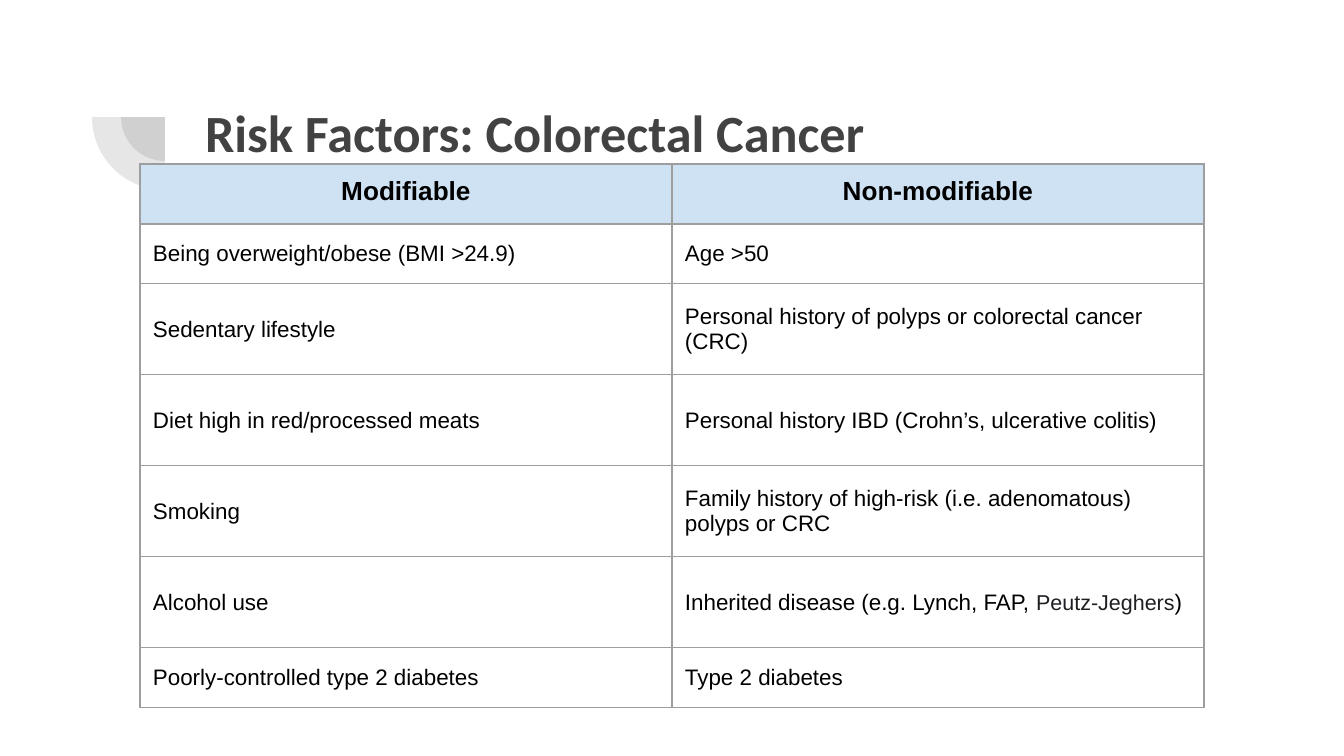
from pptx import Presentation
from pptx.dml.color import RGBColor as RGB
from pptx.enum.shapes import MSO_SHAPE as Shape
from pptx.enum.text import MSO_ANCHOR as Anchor, MSO_AUTO_SIZE as AutoSize, PP_ALIGN as Align
from pptx.oxml import parse_xml
from pptx.oxml.ns import nsdecls
from pptx.util import Pt

TITLE = "Risk Factors: Colorectal Cancer"
HEADERS = ("Modifiable", "Non-modifiable")
FACTORS = [
    ("Being overweight/obese (BMI >24.9)", "Age >50"),
    ("Sedentary lifestyle", "Personal history of polyps or colorectal cancer (CRC)"),
    ("Diet high in red/processed meats", "Personal history IBD (Crohn’s, ulcerative colitis)"),
    ("Smoking", "Family history of high-risk (i.e. adenomatous) polyps or CRC"),
    ("Alcohol use", ("Inherited disease (e.g. Lynch, FAP, ", "Peutz-Jeghers", ")")),
    ("Poorly-controlled type 2 diabetes", "Type 2 diabetes"),
]

THEME = {
    "title": {"name": "Calibri", "size": 28, "bold": True, "color": "424242"},
    "header": {"name": "Arial", "size": 14, "bold": True, "color": "000000"},
    "body": {"name": "Arial", "size": 12, "bold": False, "color": "000000"},
    "term": {"name": "Arial", "size": 11.5, "bold": False, "color": "1E1E23"},
    "pie": "424242", "header_fill": "CFE2F3", "border": "9E9E9E",
}
SLIDE = (1344, 756)
TITLE_BOX = (192, 87, 1034, 146)
PIE_CENTER, PIE_RADII, PIE_ALPHA = (165, 117), (44, 73), 13
TABLE_AT, COL_W = (140, 164), 532
ROW_H = (60, 60, 91, 91, 91, 91, 60)
INSET = 13
BORDER_PT = 0.75


def px(n):
    return round(n * 9144000 / 1344)


def boxed(*values):
    return [px(v) for v in values]


def set_attrs(target, values):
    for key, value in values.items():
        setattr(target, key, value)


def insets(*names):
    return {f"margin_{name}": px(INSET) for name in names}


def add_run(p, text, style):
    r = p.add_run()
    r.text = text
    look = THEME[style]
    set_attrs(r.font, {"name": look["name"], "size": Pt(look["size"]), "bold": look["bold"]})
    r.font.color.rgb = RGB.from_string(look["color"])


def add_pie(s, radius):
    cx, cy = PIE_CENTER
    sp = s.shapes.add_shape(Shape.PIE, *boxed(cx - radius, cy - radius, 2 * radius, 2 * radius))
    sp.adjustments[0], sp.adjustments[1] = 108, 162
    sp.rotation = 270
    sp.shadow.inherit = False
    sp.line.fill.background()
    sp.fill.solid()
    sp.fill.fore_color.rgb = RGB.from_string(THEME["pie"])
    color = sp.fill._xPr.solidFill[0]
    color.append(parse_xml(f'<a:alpha {nsdecls("a")} val="{PIE_ALPHA * 1000}"/>'))


def add_borders(cell):
    tcPr = cell._tc.get_or_add_tcPr()
    for i, side in enumerate("LRTB"):
        tcPr.insert(i, parse_xml(
            f'<a:ln{side} {nsdecls("a")} w="{Pt(BORDER_PT)}"><a:solidFill>'
            f'<a:srgbClr val="{THEME["border"]}"/></a:solidFill></a:ln{side}>'))


def fill_cell(cell, content, is_header):
    set_attrs(cell, insets("left", "right", "top", "bottom"))
    cell.vertical_anchor = Anchor.TOP if is_header else Anchor.MIDDLE
    p = cell.text_frame.paragraphs[0]
    p.alignment = Align.CENTER if is_header else Align.LEFT
    parts = (content,) if isinstance(content, str) else content
    for i, text in enumerate(parts):
        add_run(p, text, "header" if is_header else "term" if i == 1 else "body")
    if is_header:
        cell.fill.solid()
        cell.fill.fore_color.rgb = RGB.from_string(THEME["header_fill"])
    else:
        cell.fill.background()
    add_borders(cell)


def add_title(s):
    sp = s.shapes.title
    set_attrs(sp, dict(zip(("left", "top", "width", "height"), boxed(*TITLE_BOX))))
    tf = sp.text_frame
    set_attrs(tf, {"word_wrap": True, "auto_size": AutoSize.NONE, "vertical_anchor": Anchor.TOP,
                   **insets("left", "right", "top", "bottom")})
    p = tf.paragraphs[0]
    p.alignment = Align.LEFT
    add_run(p, TITLE, "title")


def add_factor_table(s):
    rows = [HEADERS, *FACTORS]
    size = (COL_W * len(HEADERS), sum(ROW_H))
    table = s.shapes.add_table(len(rows), len(HEADERS), *boxed(*TABLE_AT, *size)).table
    set_attrs(table, {"first_row": False, "horz_banding": False})
    for col in table.columns:
        col.width = px(COL_W)
    for i, (row, height) in enumerate(zip(rows, ROW_H)):
        table.rows[i].height = px(height)
        for j, content in enumerate(row):
            fill_cell(table.cell(i, j), content, i == 0)


def main():
    prs = Presentation()
    prs.slide_width, prs.slide_height = boxed(*SLIDE)
    s = prs.slides.add_slide(prs.slide_layouts[5])
    for radius in PIE_RADII:
        add_pie(s, radius)
    add_title(s)
    add_factor_table(s)
    prs.save("out.pptx")


if __name__ == "__main__":
    main()
